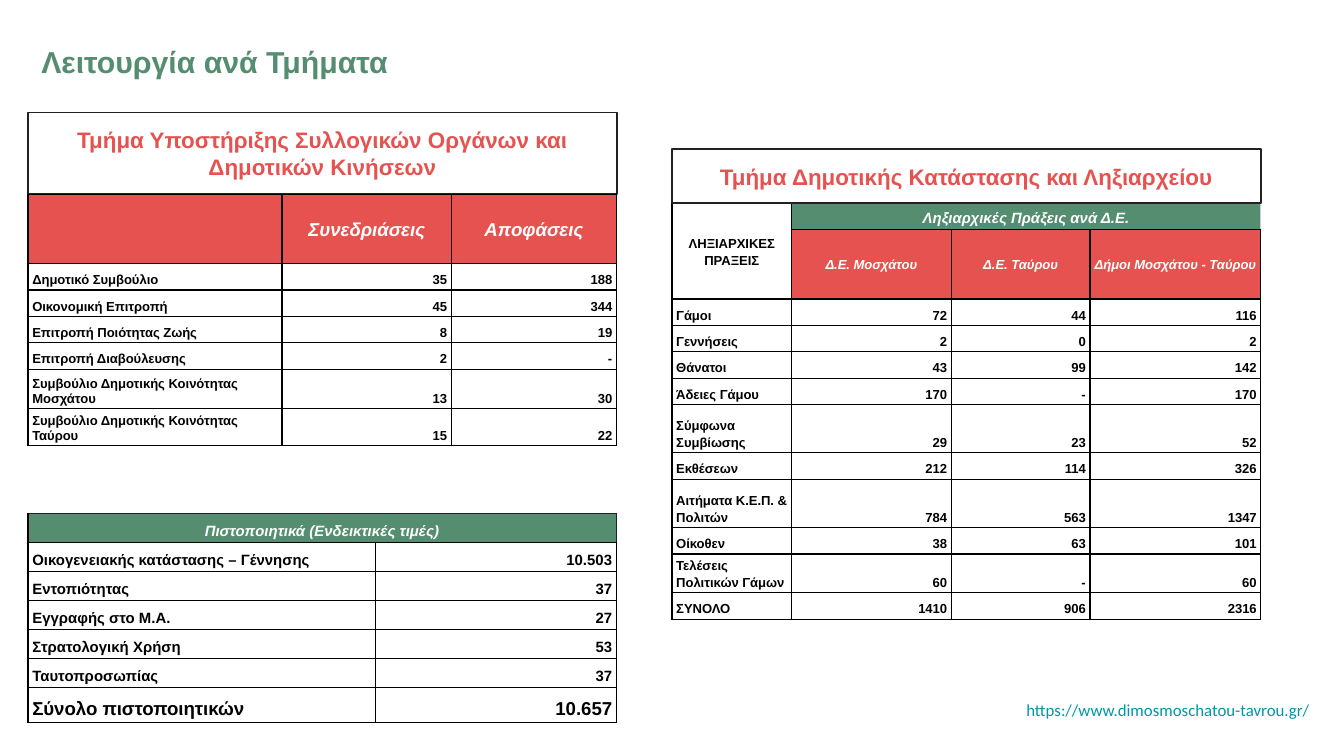
from dataclasses import dataclass, replace

from lxml import etree
from pptx import Presentation
from pptx import util as u
from pptx.dml import color
from pptx.enum import shapes, text
from pptx.oxml import ns


@dataclass(frozen=True)
class Theme:
    green: str = "548D6F"
    red: str = "E6524F"
    teal: str = "0097A7"
    black: str = "000000"
    white: str = "FFFFFF"
    outline: str = "212121"
    pale: str = "CCCCCC"
    font: str = "Arial"
    link_font: str = "Calibri"
    title: float = 16.2
    caption: float = 12
    large: float = 10
    link: float = 9
    medium: float = 8
    small: float = 7
    line: float = 0.75


THEME = Theme()
ALIGN = text.PP_ALIGN
ANCHOR = text.MSO_ANCHOR


@dataclass(frozen=True)
class CellStyle:
    size: float = THEME.small
    color: str = THEME.black
    italic: bool = False
    align: ALIGN = ALIGN.LEFT
    anchor: ANCHOR = ANCHOR.BOTTOM
    fill: str = ""
    spacing: float = 1.15
    top: str = THEME.black
    right: str = THEME.black


LABEL = CellStyle()
NUMBER = replace(LABEL, align=ALIGN.RIGHT)
CORNER = replace(LABEL, align=ALIGN.CENTER, anchor=ANCHOR.MIDDLE)
RED_HEAD = replace(CORNER, color=THEME.white, italic=True, fill=THEME.red)
GREEN_HEAD = replace(RED_HEAD, size=THEME.medium, anchor=ANCHOR.BOTTOM, fill=THEME.green)


def rgb(value):
    return color.RGBColor.from_string(value)


def add_run(paragraph, words, size, tint, bold=True, italic=False, font=THEME.font):
    run = paragraph.add_run()
    run.text = words
    run.font.name = font
    run.font.size = u.Pt(size)
    run.font.bold = bold
    run.font.italic = italic
    run.font.color.rgb = rgb(tint)


def set_frame(frame, anchor=ANCHOR.TOP):
    frame.word_wrap = True
    frame.auto_size = text.MSO_AUTO_SIZE.NONE
    frame.vertical_anchor = anchor
    frame.margin_left = frame.margin_right = u.Cm(0.25)
    frame.margin_top = frame.margin_bottom = u.Cm(0.25)
    return frame.paragraphs[0]


def set_title(slide, words):
    title = slide.shapes.title
    title.left, title.top = u.Cm(0.53), u.Cm(0.56)
    title.width, title.height = u.Cm(20.42), u.Cm(1.12)
    paragraph = set_frame(title.text_frame)
    paragraph.alignment = ALIGN.LEFT
    add_run(paragraph, words, THEME.title, THEME.green)


def add_caption(slide, left, top, height, words):
    shape = slide.shapes.add_shape(
        shapes.MSO_SHAPE.RECTANGLE, u.Cm(left), u.Cm(top), u.Cm(11.13), u.Cm(height))
    shape.shadow.inherit = False
    shape.fill.background()
    shape.line.color.rgb = rgb(THEME.outline)
    shape.line.width = u.Pt(THEME.line)
    paragraph = set_frame(shape.text_frame, ANCHOR.MIDDLE)
    paragraph.alignment = ALIGN.CENTER
    add_run(paragraph, words, THEME.caption, THEME.red)


def set_borders(cell, style):
    properties = cell._tc.get_or_add_tcPr()
    edges = {"lnL": THEME.black, "lnR": style.right, "lnT": style.top, "lnB": THEME.black}
    for tag, tint in edges.items():
        line = etree.SubElement(properties, ns.qn(f"a:{tag}"), w=str(u.Pt(THEME.line)))
        fill = etree.SubElement(line, ns.qn("a:solidFill"))
        etree.SubElement(fill, ns.qn("a:srgbClr"), val=tint)


def write_cell(cell, words, style):
    set_borders(cell, style)
    if style.fill:
        cell.fill.solid()
        cell.fill.fore_color.rgb = rgb(style.fill)
    else:
        cell.fill.background()
    cell.margin_left = cell.margin_right = u.Cm(0.08)
    cell.margin_top = cell.margin_bottom = u.Cm(0.05)
    cell.vertical_anchor = style.anchor
    if words:
        paragraph = cell.text_frame.paragraphs[0]
        paragraph.alignment = style.align
        paragraph.line_spacing = style.spacing
        add_run(paragraph, words, style.size, style.color, italic=style.italic)


def add_grid(slide, left, top, widths, rows, spans):
    """Each row is (height, words, styles); a span is (row, column, last row, last column)."""
    table = slide.shapes.add_table(
        len(rows), len(widths), u.Cm(left), u.Cm(top),
        u.Cm(sum(widths)), u.Cm(sum(row[0] for row in rows))).table
    table.first_row = table.horz_banding = False
    for column, width in zip(table.columns, widths):
        column.width = u.Cm(width)
    for first_row, first_column, last_row, last_column in spans:
        table.cell(first_row, first_column).merge(table.cell(last_row, last_column))
    for row, (height, words, styles) in zip(table.rows, rows):
        row.height = u.Cm(height)
        for cell, content, style in zip(row.cells, words, styles):
            write_cell(cell, content, style)


def add_registry(slide):
    green = replace(GREEN_HEAD, top=THEME.pale, right=THEME.pale)
    rows = [
        (0.5, ["ΛΗΞΙΑΡΧΙΚΕΣ ΠΡΑΞΕΙΣ", "Ληξιαρχικές Πράξεις ανά Δ.Ε.", "", ""], [CORNER] + [green] * 3),
        (1.31, ["", "Δ.Ε. Μοσχάτου", "Δ.Ε. Ταύρου", "Δήμοι Μοσχάτου - Ταύρου"],
         [CORNER] + [RED_HEAD] * 3),
    ]
    records = [
        (0.5, "Γάμοι", "72", "44", "116"),
        (0.5, "Γεννήσεις", "2", "0", "2"),
        (0.5, "Θάνατοι", "43", "99", "142"),
        (0.5, "Άδειες Γάμου", "170", "-", "170"),
        (0.91, "Σύμφωνα Συμβίωσης", "29", "23", "52"),
        (0.5, "Εκθέσεων", "212", "114", "326"),
        (0.91, "Αιτήματα Κ.Ε.Π. & Πολιτών", "784", "563", "1347"),
        (0.5, "Οίκοθεν", "38", "63", "101"),
        (0.7, "Τελέσεις Πολιτικών Γάμων", "60", "-", "60"),
        (0.5, "ΣΥΝΟΛΟ", "1410", "906", "2316"),
    ]
    rows += [(height, words, [LABEL] + [NUMBER] * 3) for height, *words in records]
    add_grid(slide, 12.7, 3.84, [2.26, 3.02, 2.62, 3.23], rows, [(0, 0, 1, 0), (0, 1, 0, 3)])


def add_certificates(slide):
    header = replace(GREEN_HEAD, top=THEME.outline, right=THEME.outline)
    rows = [(0.55, ["Πιστοποιητικά (Ενδεικτικές τιμές)", "", ""], [header] * 3)]
    records = [
        (0.55, THEME.medium, "Οικογενειακής κατάστασης – Γέννησης", "10.503"),
        (0.55, THEME.medium, "Εντοπιότητας", "37"),
        (0.55, THEME.medium, "Εγγραφής στο Μ.Α.", "27"),
        (0.55, THEME.medium, "Στρατολογική Χρήση", "53"),
        (0.55, THEME.medium, "Ταυτοπροσωπίας", "37"),
        (0.65, THEME.large, "Σύνολο πιστοποιητικών", "10.657"),
    ]
    for height, size, label, count in records:
        name, number = replace(LABEL, size=size), replace(NUMBER, size=size)
        rows.append((height, [label, "", count], [name, name, number]))
    spans = [(0, 0, 0, 2)] + [(row, 0, row, 1) for row in range(1, len(rows))]
    add_grid(slide, 0.53, 9.7, [3.45, 3.12, 4.55], rows, spans)


def add_meetings(slide):
    header = replace(RED_HEAD, size=THEME.large)
    label, number = replace(LABEL, spacing=1.0), replace(NUMBER, spacing=1.0)
    rows = [(1.31, ["", "Συνεδριάσεις", "", "Αποφάσεις"], [header] * 4)]
    records = [
        (0.5, "Δημοτικό Συμβούλιο", "35", "188"),
        (0.5, "Οικονομική Επιτροπή", "45", "344"),
        (0.5, "Επιτροπή Ποιότητας Ζωής", "8", "19"),
        (0.5, "Επιτροπή Διαβούλευσης", "2", "-"),
        (0.74, "Συμβούλιο Δημοτικής Κοινότητας Μοσχάτου", "13", "30"),
        (0.7, "Συμβούλιο Δημοτικής Κοινότητας Ταύρου", "15", "22"),
    ]
    for height, body, sessions, decisions in records:
        rows.append((height, [body, sessions, "", decisions], [label] + [number] * 3))
    spans = [(row, 1, row, 2) for row in range(len(rows))]
    add_grid(slide, 0.53, 3.67, [4.8, 0.86, 2.34, 3.12], rows, spans)


def add_web_address(slide, words):
    box = slide.shapes.add_textbox(u.Cm(16.66), u.Cm(12.98), u.Cm(8.33), u.Cm(0.89))
    paragraph = set_frame(box.text_frame)
    paragraph.alignment = ALIGN.RIGHT
    add_run(paragraph, words, THEME.link, THEME.teal, bold=False, font=THEME.link_font)


def main():
    presentation = Presentation()
    presentation.slide_width, presentation.slide_height = u.Cm(25.4), u.Cm(14.29)
    slide = presentation.slides.add_slide(presentation.slide_layouts[5])
    set_title(slide, "Λειτουργία ανά Τμήματα")
    # Right half: civil registry
    add_registry(slide)
    add_caption(slide, 12.7, 2.82, 1.02, "Τμήμα Δημοτικής Κατάστασης και Ληξιαρχείου")
    # Left half: certificates below, collective bodies above
    add_certificates(slide)
    add_caption(slide, 0.53, 2.13, 1.54, "Τμήμα Υποστήριξης Συλλογικών Οργάνων και Δημοτικών Κινήσεων")
    add_meetings(slide)
    # Footer
    add_web_address(slide, "https://www.dimosmoschatou-tavrou.gr/")
    presentation.save("out.pptx")


if __name__ == "__main__":
    main()
